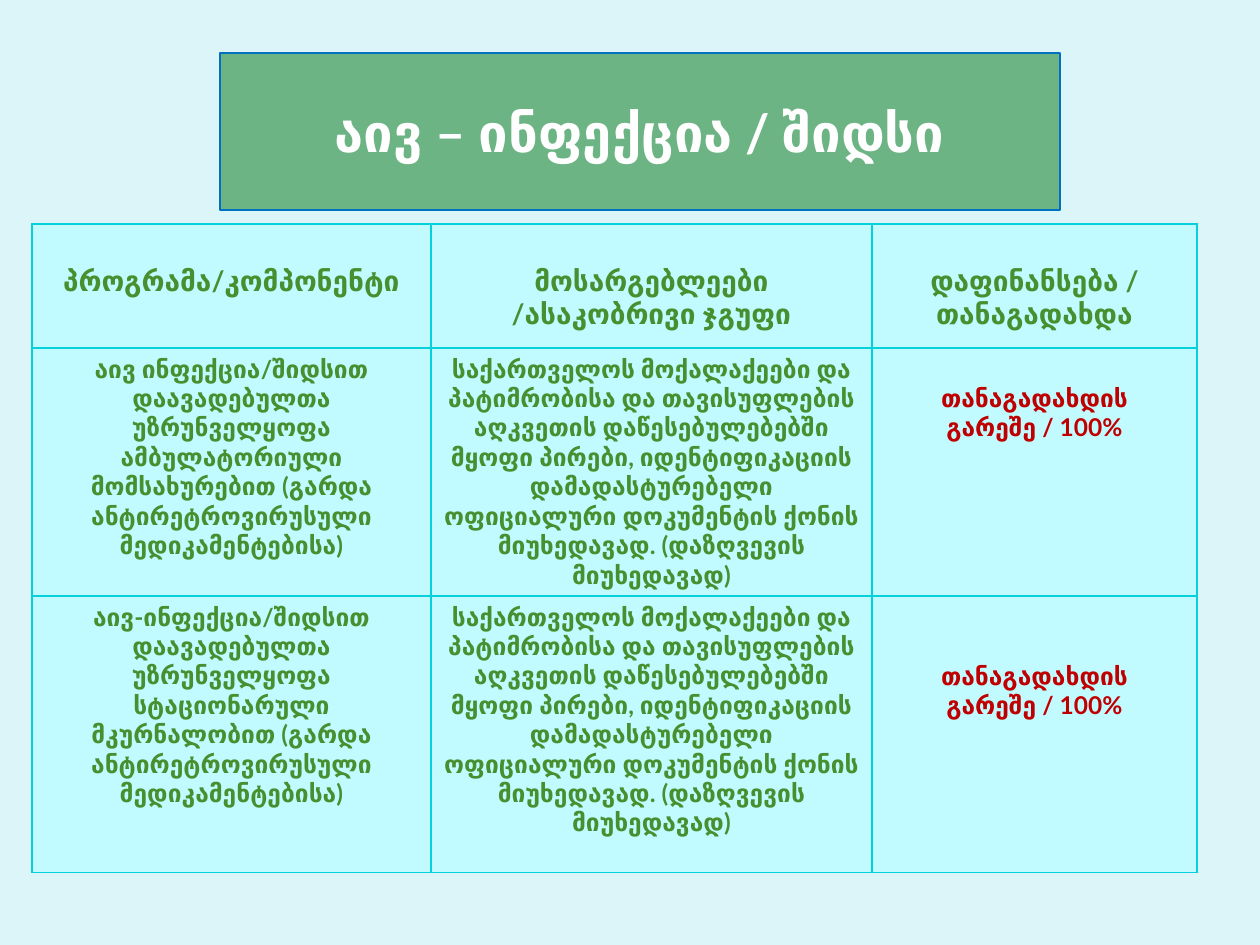
from lxml import etree
from pptx import Presentation
from pptx.dml.color import RGBColor
from pptx.enum.shapes import MSO_SHAPE
from pptx.enum.text import MSO_ANCHOR, PP_ALIGN
from pptx.oxml.ns import qn
from pptx.util import Pt

EMU_PER_PX = 914400 / 126
RECTANGLE = MSO_SHAPE.RECTANGLE
MIDDLE, TOP = MSO_ANCHOR.MIDDLE, MSO_ANCHOR.TOP
CENTER = PP_ALIGN.CENTER

FONT = "Lato"
PAGE_FILL = RGBColor(0xDB, 0xF5, 0xF9)
TITLE_FILL = RGBColor(0x6C, 0xB4, 0x84)
TITLE_LINE = RGBColor(0x00, 0x70, 0xC0)
CELL_FILL = RGBColor(0xC1, 0xFB, 0xFF)
GRID = RGBColor(0x06, 0xD0, 0xD9)
WHITE = RGBColor(0xFF, 0xFF, 0xFF)
GREEN = RGBColor(0x48, 0x8F, 0x30)
RED = RGBColor(0xC0, 0x00, 0x00)

TITLE = "აივ – ინფექცია / შიდსი"
HEADERS = ["პროგრამა/კომპონენტი", "მოსარგებლეები /ასაკობრივი ჯგუფი",
           "დაფინანსება / თანაგადახდა"]
OUTPATIENT = ("აივ ინფექცია/შიდსით დაავადებულთა უზრუნველყოფა ამბულატორიული "
              "მომსახურებით (გარდა ანტირეტროვირუსული მედიკამენტებისა)")
INPATIENT = ("აივ-ინფექცია/შიდსით დაავადებულთა უზრუნველყოფა სტაციონარული "
             "მკურნალობით (გარდა ანტირეტროვირუსული მედიკამენტებისა)")
BENEFICIARIES = ("საქართველოს მოქალაქეები და პატიმრობისა და თავისუფლების "
                 "აღკვეთის დაწესებულებებში მყოფი პირები, იდენტიფიკაციის "
                 "დამადასტურებელი ოფიციალური დოკუმენტის ქონის მიუხედავად. "
                 "(დაზღვევის მიუხედავად)")
FUNDING = "თანაგადახდის გარეშე / 100%"

COLUMN_WIDTHS = [399, 441, 325]
ROW_HEIGHTS = [124, 248, 277]
CELL_MARGIN = 6


def px(length):
    return round(length * EMU_PER_PX)


def write(text_frame, text, size, color):
    text_frame.text = text
    para = text_frame.paragraphs[0]
    para.alignment = CENTER
    font = para.runs[0].font
    font.name, font.size, font.bold = FONT, Pt(size), True
    font.color.rgb = color


def add_title(page, left, top, width, height):
    box = page.shapes.add_shape(RECTANGLE, px(left), px(top), px(width), px(height))
    box.shadow.inherit = False
    box.fill.solid()
    box.fill.fore_color.rgb = TITLE_FILL
    box.line.color.rgb = TITLE_LINE
    box.line.width = Pt(0.75)
    box.text_frame.word_wrap = True
    box.text_frame.vertical_anchor = MIDDLE
    write(box.text_frame, TITLE, 30, WHITE)


def set_borders(cell):
    properties = cell._tc.get_or_add_tcPr()
    for side in ("a:lnL", "a:lnR", "a:lnT", "a:lnB"):
        line = etree.SubElement(properties, qn(side), w=str(Pt(0.75)))
        fill = etree.SubElement(line, qn("a:solidFill"))
        etree.SubElement(fill, qn("a:srgbClr"), val=str(GRID))


def fill_cell(cell, text, size, color, drop):
    """Write a cell whose text starts drop px below the usual top margin."""
    set_borders(cell)
    cell.fill.solid()
    cell.fill.fore_color.rgb = CELL_FILL
    cell.vertical_anchor = TOP
    cell.margin_top = px(CELL_MARGIN + drop)
    write(cell.text_frame, text, size, color)


def add_programme_table(page, left, top):
    frame = page.shapes.add_table(len(ROW_HEIGHTS), len(COLUMN_WIDTHS), px(left), px(top),
                                  px(sum(COLUMN_WIDTHS)), px(sum(ROW_HEIGHTS)))
    table = frame.table
    for column, width in zip(table.columns, COLUMN_WIDTHS):
        column.width = px(width)
    for row, height in zip(table.rows, ROW_HEIGHTS):
        row.height = px(height)

    for index, header in enumerate(HEADERS):
        fill_cell(table.cell(0, index), header, 16, GREEN, 34)
    programmes = [(OUTPATIENT, 29), (INPATIENT, 59)]
    for index, (programme, funding_drop) in enumerate(programmes, start=1):
        fill_cell(table.cell(index, 0), programme, 14, GREEN, 0)
        fill_cell(table.cell(index, 1), BENEFICIARIES, 14, GREEN, 0)
        fill_cell(table.cell(index, 2), FUNDING, 14, RED, funding_drop)


def main():
    deck = Presentation()
    deck.slide_width, deck.slide_height = px(1260), px(945)
    page = deck.slides.add_slide(deck.slide_layouts[6])
    page.background.fill.solid()
    page.background.fill.fore_color.rgb = PAGE_FILL
    add_title(page, 220, 53, 840, 157)
    add_programme_table(page, 32, 224)
    deck.save("out.pptx")


if __name__ == "__main__":
    main()
